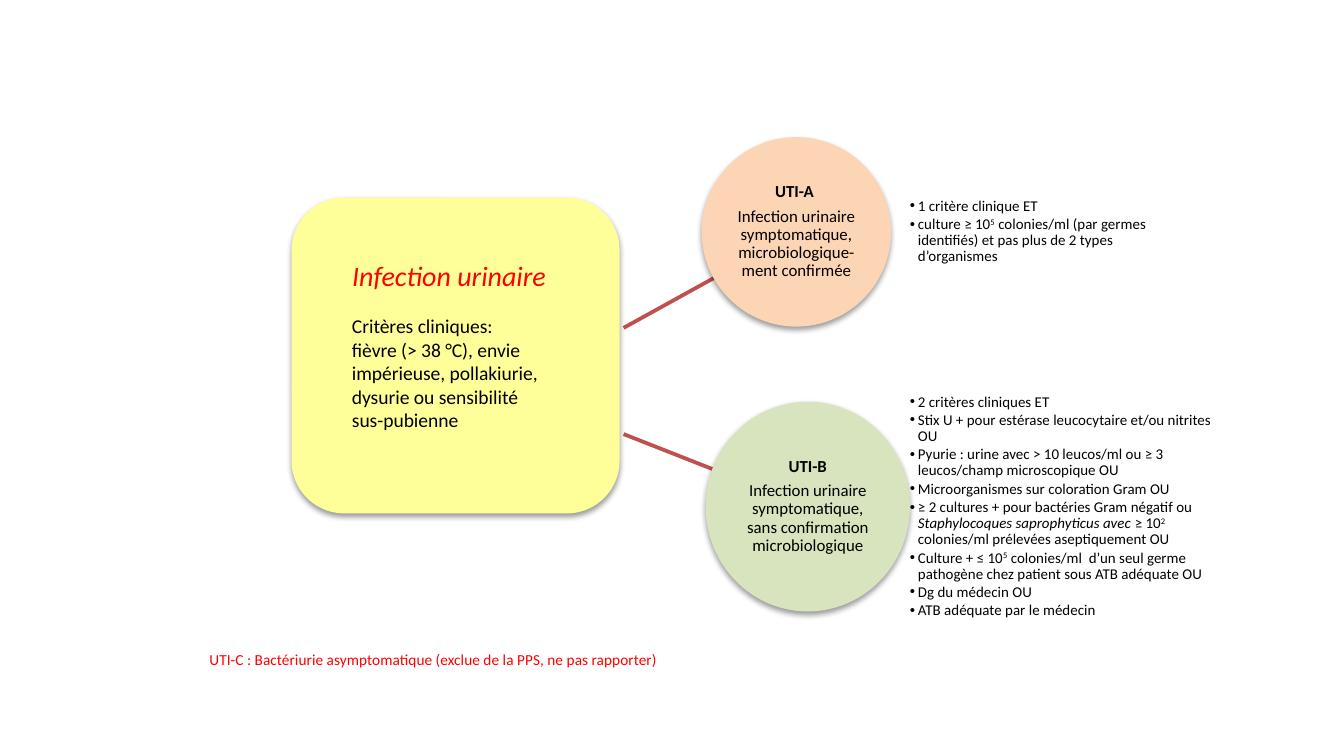
from typing import NamedTuple

from lxml import etree
from pptx import Presentation
from pptx.dml.color import RGBColor
from pptx.enum import shapes as sh, text as tx
from pptx.oxml import parse_xml
from pptx.oxml.ns import nsdecls, qn
from pptx.util import Inches, Pt

BLACK, RED, LINK = "000000", "FF0000", "C0504D"


class Box(NamedTuple):
    left: float
    top: float
    width: float
    height: float


class Case(NamedTuple):
    """One infection class: its circle, its link and its list of criteria."""
    name: str
    label: str
    fill: str
    circle: Box
    link: tuple[float, float, float, float]
    area: Box
    items: list[str]


# In items, "|" parts the runs; "^" starts a superscript and "_" an italic.
CASES = [
    Case("UTI-A\u00a0", "Infection urinaire symptomatique, microbiologique-ment confirmée",
         "FCD5B5", Box(5.22, 1.02, 1.41, 1.41), (4.64, 2.44, 5.31, 2.07),
         Box(6.77, 1.02, 2.12, 1.41),
         ["1 critère clinique ET",
          "culture ≥ 10|^5| colonies/ml (par germes identifiés) et pas plus "
          "de 2 types d’organismes"]),
    Case("UTI-B", "Infection urinaire symptomatique, sans confirmation microbiologique",
         "D7E4BD", Box(5.25, 2.99, 1.52, 1.56), (4.64, 3.23, 5.3, 3.49),
         Box(6.77, 2.99, 2.28, 1.56),
         ["2 critères cliniques ET",
          "Stix U + pour estérase leucocytaire et/ou nitrites OU",
          "Pyurie : urine avec > 10 leucos/ml ou ≥ 3 leucos/champ microscopique OU",
          "Microorganismes sur coloration Gram OU",
          "≥ 2 cultures + pour bactéries Gram négatif ou |_Staphylocoques "
          "saprophyticus avec |≥ 10|^2| colonies/ml prélevées aseptiquement OU",
          "Culture + ≤ 10|^5| colonies/ml  d’un seul germe pathogène chez patient "
          "sous ATB adéquate OU",
          "Dg du médecin OU",
          "ATB adéquate par le médecin"]),
]


def paint(fill, color: str) -> None:
    fill.solid()
    fill.fore_color.rgb = RGBColor.from_string(color)


def style(par, size: float, color: str = BLACK, bold: bool = False,
          italic: bool = False) -> None:
    for run in par.runs:
        font = run.font
        font.name, font.size, font.bold, font.italic = "Calibri", Pt(size), bold, italic
        paint(font.fill, color)


def frame(shape, inset: tuple[float, float], anchor) -> None:
    """Set wrapping, side and top insets, and the vertical anchor."""
    body = shape.text_frame
    body.word_wrap, body.auto_size = True, tx.MSO_AUTO_SIZE.NONE
    body.margin_left = body.margin_right = Inches(inset[0])
    body.margin_top = body.margin_bottom = Inches(inset[1])
    body.vertical_anchor = anchor


def place(holder, box: Box) -> None:
    """Move a placeholder to its box and bring it to the front."""
    holder.left, holder.top, holder.width, holder.height = map(Inches, box)
    holder._element.getparent().append(holder._element)


def add_form(slide, kind, box: Box, color: str):
    """Draw a borderless shape with a soft shadow below it."""
    form = slide.shapes.add_shape(kind, *map(Inches, box))
    paint(form.fill, color)
    form.line.fill.background()
    form.shadow.inherit = False
    glow = form._element.spPr.find(qn("a:effectLst"))
    glow.append(parse_xml(
        f'<a:outerShdw {nsdecls("a")} blurRad="40000" dist="20000" dir="5400000" '
        'rotWithShape="0"><a:srgbClr val="000000"><a:alpha val="38000"/>'
        '</a:srgbClr></a:outerShdw>'))
    return form


def add_link(slide, ends: tuple[float, float, float, float]) -> None:
    link = slide.shapes.add_connector(sh.MSO_CONNECTOR.STRAIGHT, *map(Inches, ends))
    paint(link.line.fill, LINK)
    link.line.width = Pt(2)
    etree.SubElement(link._element.spPr, qn("a:effectLst"))


def add_circle(slide, case: Case) -> None:
    circle = add_form(slide, sh.MSO_SHAPE.OVAL, case.circle, case.fill)
    frame(circle, (0.01, 0.01), tx.MSO_ANCHOR.MIDDLE)
    circle.text_frame.text = f"{case.name}\n{case.label}"
    for num, par in enumerate(circle.text_frame.paragraphs):
        par.alignment = tx.PP_ALIGN.CENTER
        par.line_spacing, par.space_after = 0.9, Pt(3.15)
        style(par, 9, bold=num == 0)


def fill_list(holder, case: Case) -> None:
    place(holder, case.area)
    frame(holder, (0, 0), tx.MSO_ANCHOR.MIDDLE)
    body = holder.text_frame
    body.text = "\n".join(case.items)
    for par, item in zip(body.paragraphs, case.items):
        par.text = ""
        par.line_spacing, par.space_before, par.space_after = 0.9, Pt(0), Pt(1.2)
        props = par._p.get_or_add_pPr()
        props.set("marL", str(Inches(0.06)))
        props.set("indent", str(Inches(-0.06)))
        parts = item.split("|")
        for part in parts:
            par.add_run().text = part.lstrip("^_")
        style(par, 8)
        for run, part in zip(par.runs, parts):
            run.font.italic = part.startswith("_")
            if part.startswith("^"):
                run.font._element.set("baseline", "30000")


def add_note(slide, box: Box, words: str, size: float, color: str) -> None:
    note = slide.shapes.add_textbox(*map(Inches, box))
    frame(note, (0.1, 0.05), tx.MSO_ANCHOR.TOP)
    note.text_frame.text = words
    for par in note.text_frame.paragraphs:
        style(par, size, color)


def set_title(slide, box: Box, words: str) -> None:
    title = slide.shapes.title
    place(title, box)
    frame(title, (0.1, 0.05), tx.MSO_ANCHOR.TOP)
    title.text_frame.text = words
    par = title.text_frame.paragraphs[0]
    par.alignment = tx.PP_ALIGN.LEFT
    style(par, 15, RED, italic=True)


def main() -> None:
    deck = Presentation()
    deck.slide_width, deck.slide_height = Inches(10), Inches(10 * 9 / 16)
    slide = deck.slides.add_slide(deck.slide_layouts[3])
    lists = list(slide.placeholders)[1:]

    for case in CASES:
        add_link(slide, case.link)
    add_form(slide, sh.MSO_SHAPE.ROUNDED_RECTANGLE, Box(2.17, 1.47, 2.44, 2.35), "FFFF99")
    for case, holder in zip(CASES, lists):
        add_circle(slide, case)
        fill_list(holder, case)

    set_title(slide, Box(2.52, 1.87, 1.89, 0.4), "Infection urinaire")
    add_note(slide, Box(2.52, 2.29, 1.89, 1.34),
             "Critères cliniques:\nfièvre (> 38 °C), envie impérieuse, pollakiurie, "
             "dysurie ou sensibilité\nsus-pubienne", 10.5, BLACK)
    add_note(slide, Box(1.46, 4.79, 4.02, 0.3),
             "UTI-C\u00a0: Bactériurie asymptomatique (exclue de la PPS, ne pas rapporter)",
             8.25, RED)
    deck.save("out.pptx")


if __name__ == "__main__":
    main()
